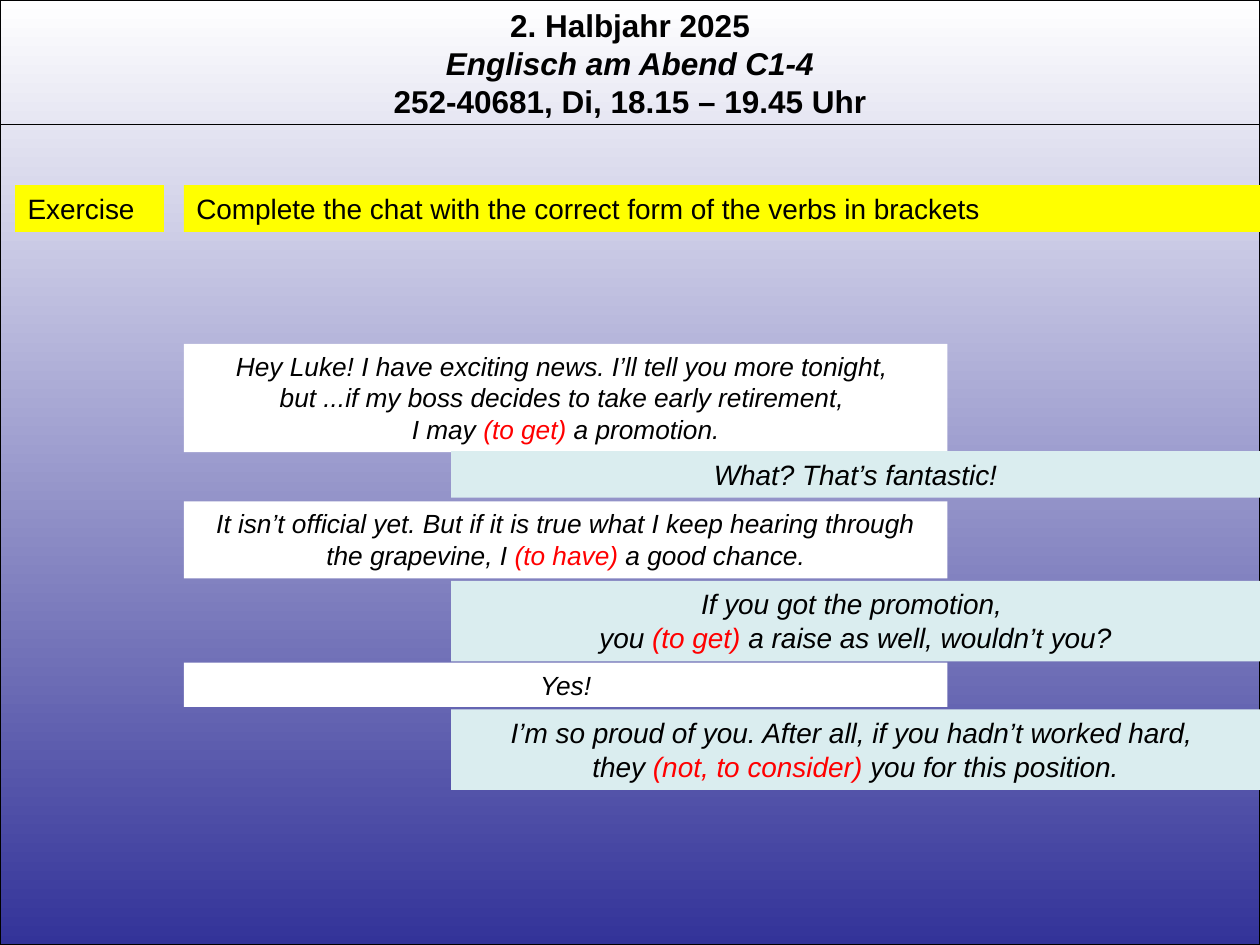
from lxml.etree import SubElement
from pptx import Presentation
from pptx.dml.color import RGBColor
from pptx.enum.shapes import MSO_CONNECTOR as Connector, MSO_SHAPE as Preset
from pptx.enum.text import MSO_ANCHOR as Anchor, MSO_AUTO_SIZE as AutoSize, PP_ALIGN as Align
from pptx.oxml.ns import qn
from pptx.util import Emu, Pt

SCALE = 9144
PAGE_WIDTH, PAGE_HEIGHT = 1000, 750
FONT = "Arial"
COLORS = {
    "ink": "000000",
    "verb": "FF0000",
    "top": "FFFFFF",
    "bottom": "333399",
    "task": "FFFF00",
    "friend": "FFFFFF",
    "luke": "DAEDEF",
}
SPEAKERS = {"friend": (146, 606, 15), "luke": (358, 642, 16)}
HEADING = ["2. Halbjahr 2025", "Englisch am Abend C1-4", "252-40681, Di, 18.15 – 19.45 Uhr"]
CHAT = [
    ("friend", 0, 86, [
        ["Hey Luke! I have exciting news. I’ll tell you more tonight, "],
        ["but ...if my boss decides to take early retirement, "],
        ["I may ", "(to get) ", "a promotion."],
    ]),
    ("luke", 85, 37, [["What? That’s fantastic!"]]),
    ("friend", 125, 61, [
        ["It isn’t official yet. But if it is true what I keep hearing through the grapevine, I ",
         "(to have) ", "a good chance."],
    ]),
    ("luke", 188, 64, [
        ["If you got the promotion, "],
        ["you ", "(to get) ", "a raise as well, wouldn’t you?"],
    ]),
    ("friend", 253, 35, [["Yes!"]]),
    ("luke", 290, 64, [
        ["I’m so proud of you. After all, if you hadn’t worked hard, "],
        ["they ", "(not, to consider) ", "you for this position."],
    ]),
]


def px(*lengths):
    """Turn px lengths into EMU."""
    return [Emu(length * SCALE) for length in lengths]


def color(name):
    """Look up a named colour."""
    return RGBColor.from_string(COLORS[name])


def write(shape, lines, size, align, bold=False, italic=False):
    """Write lines of spans; every second span is a verb to fill in."""
    frame = shape.text_frame
    frame.word_wrap = True
    frame.auto_size = AutoSize.NONE
    frame.vertical_anchor = Anchor.TOP
    for index, spans in enumerate(lines):
        para = frame.add_paragraph() if index else frame.paragraphs[0]
        para.alignment = align
        para.font.name, para.font.size = FONT, Pt(size)
        para.font.bold, para.font.italic = bold, italic
        para.font.color.rgb = color("ink")
        for position, text in enumerate(spans):
            span = para.add_run()
            span.text = text
            if position % 2:
                span.font.color.rgb = color("verb")


def add_box(page, box, fill):
    """Add a plain filled rectangle."""
    shape = page.shapes.add_shape(Preset.RECTANGLE, *px(*box))
    shape.shadow.inherit = False
    shape.fill.solid()
    shape.fill.fore_color.rgb = color(fill)
    shape.line.fill.background()
    return shape


def add_backdrop(page, box):
    """Cover the box with the vertical gradient and a thin frame."""
    shape = add_box(page, box, "top")
    shape.fill.gradient()
    shape.fill.gradient_angle = 270
    for stop, name, position in zip(shape.fill.gradient_stops, ("top", "bottom"), (0, 1)):
        stop.color.rgb = color(name)
        stop.position = position
    shape.line.color.rgb = color("ink")
    shape.line.width = Pt(0.75)


def add_heading(page, box):
    """Place the course title above the backdrop, with a rule below it."""
    left, top, width, height = box
    title = page.shapes.title
    title.left, title.top, title.width, title.height = px(*box)
    write(title, [[text] for text in HEADING], 18, Align.CENTER, bold=True)
    title.text_frame.paragraphs[1].font.italic = True
    page.shapes.element.append(title.element)
    level = top + height - 2
    rule = page.shapes.add_connector(Connector.STRAIGHT, *px(left, level, left + width, level))
    rule.line.color.rgb = color("ink")
    rule.line.width = Pt(0.75)
    SubElement(rule.element.spPr, qn("a:effectLst"))


def add_task(page, box):
    """Place the exercise label and its instruction side by side."""
    left, top, width, height = box
    offset = 134
    parts = [
        (0, 118, "Exercise"),
        (offset, width - offset, "Complete the chat with the correct form of the verbs in brackets"),
    ]
    for shift, part_width, text in parts:
        shape = add_box(page, (left + shift, top, part_width, height), "task")
        write(shape, [[text]], 16, Align.LEFT)


def add_chat(page, top):
    """Stack the chat messages, one column per speaker."""
    for speaker, offset, height, lines in CHAT:
        left, width, size = SPEAKERS[speaker]
        shape = add_box(page, (left, top + offset, width, height), speaker)
        write(shape, lines, size, Align.CENTER, italic=True)


def main():
    """Build the exercise slide."""
    deck = Presentation()
    deck.slide_width, deck.slide_height = px(PAGE_WIDTH, PAGE_HEIGHT)
    page = deck.slides.add_slide(deck.slide_layouts[5])
    add_backdrop(page, (0, 0, PAGE_WIDTH, PAGE_HEIGHT))
    add_heading(page, (0, 0, PAGE_WIDTH, 101))
    add_task(page, (12, 147, 988, 37))
    add_chat(page, 273)
    deck.save("out.pptx")


if __name__ == "__main__":
    main()
